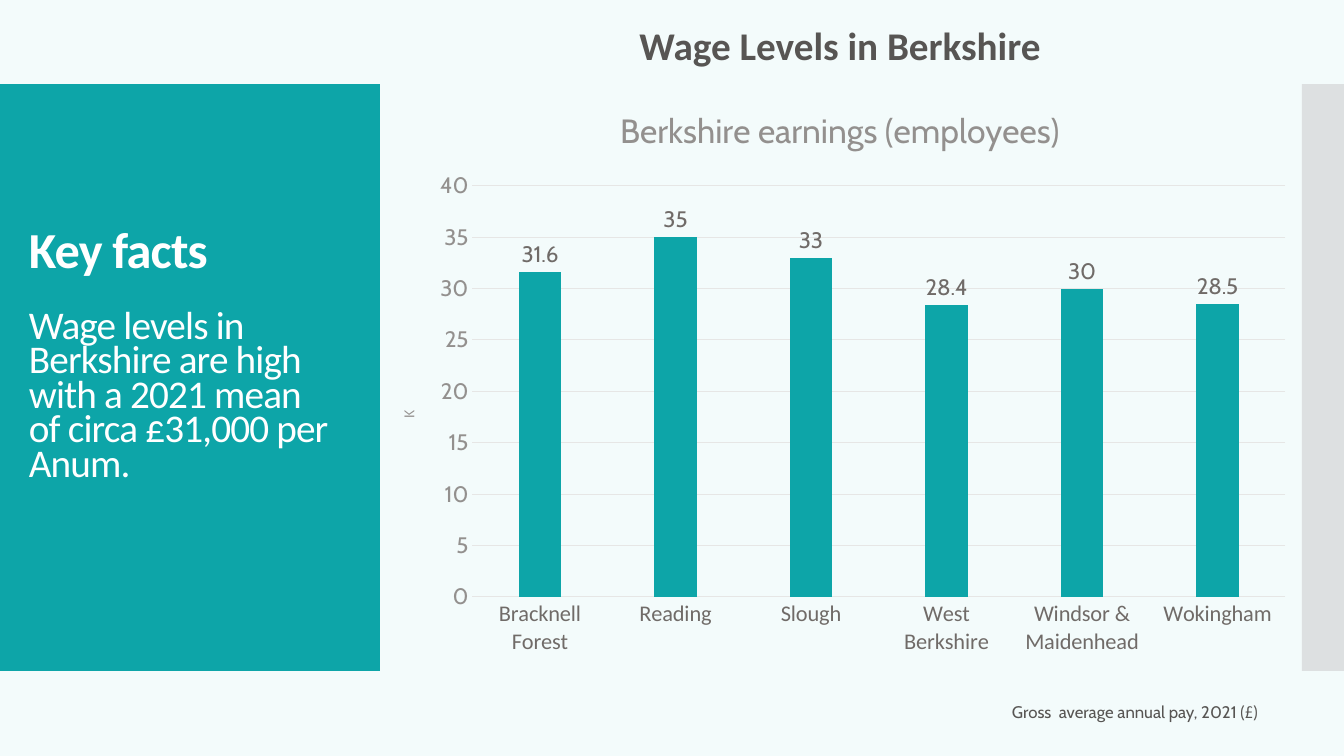
from dataclasses import dataclass

from pptx import Presentation
from pptx.chart.data import CategoryChartData
from pptx.dml.color import RGBColor
from pptx.enum.chart import XL_CHART_TYPE as ChartType, XL_LABEL_POSITION as LabelPos, XL_TICK_MARK as Tick
from pptx.enum.shapes import MSO_SHAPE as Shape
from pptx.enum.text import MSO_ANCHOR as Anchor, PP_ALIGN as Align
from pptx.oxml import parse_xml
from pptx.oxml.ns import nsdecls
from pptx.util import Emu, Pt

TITLE = "Wage Levels in Berkshire"
FACTS_HEADING = "Key facts"
FACTS_BODY = "Wage levels in Berkshire are high with a 2021 mean of circa £31,000 per Anum."
FOOTNOTE = "Gross  average annual pay, 2021 (£)"
CHART_TITLE = "Berkshire earnings (employees)"
VALUE_UNIT = "K"
EARNINGS = {
    "Bracknell Forest": 31.6,
    "Reading": 35,
    "Slough": 33,
    "West Berkshire": 28.4,
    "Windsor & Maidenhead": 30,
    "Wokingham": 28.5,
}

SLIDE_W, SLIDE_H = 1344, 756
BAND_TOP, BAND_H = 84, 587
PANEL_W, STRIP_W = 380, 42
CHART_BOX = (378, 84, SLIDE_W - STRIP_W - 378, 585)
PLOT_BOX = (472, 186, 813, 411)
TITLE_BOX = (378, 16, 924, 57)
FACTS_BOX = (19, 111, 325, 507)
FOOTNOTE_BOX = (950, 697, 318, 30)


@dataclass(frozen=True)
class Theme:
    teal: str = "0DA5A8"
    background: str = "F3FBFB"
    strip: str = "DDE0E1"
    white: str = "FFFFFF"
    dark: str = "575553"
    label: str = "706B68"
    muted: str = "93908E"
    grid: str = "E6E6E5"
    body_font: str = "Calibri"
    chart_font: str = "Cabin"
    heading: int = 36
    title: int = 28
    chart_title: int = 24
    axis: int = 16
    note: int = 12
    unit: int = 10
    leading: float = 24.6


T = Theme()


def px(n):
    return Emu(round(n * 914400 / 100.8))


def rgb(color):
    return RGBColor.from_string(color)


def style(font, name, size, color, bold=False):
    font.name, font.size, font.bold = name, Pt(size), bold
    font.color.rgb = rgb(color)


def place(sp, box):
    sp.left, sp.top, sp.width, sp.height = map(px, box)


def add_block(s, box, color):
    sp = s.shapes.add_shape(Shape.RECTANGLE, *map(px, box))
    sp.shadow.inherit = False
    sp.fill.solid()
    sp.fill.fore_color.rgb = rgb(color)
    sp.line.fill.background()


def add_text(s, box):
    tf = s.shapes.add_textbox(*map(px, box)).text_frame
    tf.word_wrap = True
    return tf


def add_title(s):
    sp = s.shapes.title
    place(sp, TITLE_BOX)
    tf = sp.text_frame
    tf.text = TITLE
    tf.vertical_anchor = Anchor.TOP
    p = tf.paragraphs[0]
    p.alignment = Align.CENTER
    p.line_spacing, p.space_before = 1.0, Pt(0)
    style(p.font, T.body_font, T.title, T.dark, True)


def add_facts(s):
    tf = add_text(s, FACTS_BOX)
    tf.vertical_anchor = Anchor.MIDDLE
    heading, body = tf.paragraphs[0], tf.add_paragraph()
    heading.space_after = Pt(T.leading)
    for p, text, size, bold in (
        (heading, FACTS_HEADING, T.heading, True),
        (body, FACTS_BODY, T.title, False),
    ):
        r = p.add_run()
        r.text = text
        r.font.element.set("spc", "-60") if hasattr(r.font, "element") else r._r.get_or_add_rPr().set("spc", "-60")
        p.line_spacing = Pt(T.leading)
        style(p.font, T.body_font, size, T.white, bold)


def add_footnote(s):
    p = add_text(s, FOOTNOTE_BOX).paragraphs[0]
    p.text = FOOTNOTE
    p.alignment = Align.RIGHT
    style(p.font, T.chart_font, T.note, T.dark)


def fix_plot_area(chart):
    left, top, width, height = CHART_BOX
    x, y, w, h = PLOT_BOX
    fractions = {"x": (x - left) / width, "y": (y - top) / height, "w": w / width, "h": h / height}
    modes = '<c:layoutTarget val="inner"/><c:xMode val="edge"/><c:yMode val="edge"/>'
    sizes = "".join(f'<c:{k} val="{v:.3f}"/>' for k, v in fractions.items())
    plot_area = chart.element.xpath("c:chart/c:plotArea")[0]
    for old in plot_area.xpath("c:layout"):
        plot_area.remove(old)
    plot_area.insert(0, parse_xml(
        f'<c:layout {nsdecls("c")}><c:manualLayout>{modes}{sizes}</c:manualLayout></c:layout>'))


def set_title(owner, tf, text, size, color):
    tf.text = text
    style(tf.paragraphs[0].font, T.chart_font, size, color)


def add_earnings_chart(s):
    data = CategoryChartData()
    data.categories = list(EARNINGS)
    data.add_series(CHART_TITLE, list(EARNINGS.values()))
    chart = s.shapes.add_chart(ChartType.COLUMN_CLUSTERED, *map(px, CHART_BOX), data).chart
    style(chart.font, T.chart_font, T.unit, T.dark)
    chart.has_legend = False
    chart.has_title = True
    set_title(chart, chart.chart_title.text_frame, CHART_TITLE, T.chart_title, T.muted)

    plot = chart.plots[0]
    plot.vary_by_categories = False
    plot.gap_width, plot.overlap = 219, -27
    fill = plot.series[0].format.fill
    fill.solid()
    fill.fore_color.rgb = rgb(T.teal)
    labels = plot.series[0].data_labels
    labels.show_value = True
    labels.position = LabelPos.OUTSIDE_END
    style(labels.font, T.chart_font, T.axis, T.label)

    cat, val = chart.category_axis, chart.value_axis
    for axis, font, color in ((cat, T.body_font, T.label), (val, T.chart_font, T.muted)):
        axis.major_tick_mark = axis.minor_tick_mark = Tick.NONE
        style(axis.tick_labels.font, font, T.axis, color)
    val.minimum_scale, val.maximum_scale, val.major_unit = 0, 40, 5
    val.has_major_gridlines = True
    val.format.line.fill.background()
    for line in (cat.format.line, val.major_gridlines.format.line):
        line.color.rgb = rgb(T.grid)
        line.width = Pt(0.75)
    set_title(val, val.axis_title.text_frame, VALUE_UNIT, T.unit, T.muted)
    fix_plot_area(chart)


def main():
    prs = Presentation()
    prs.slide_width, prs.slide_height = px(SLIDE_W), px(SLIDE_H)
    s = prs.slides.add_slide(prs.slide_layouts.get_by_name("Title Only"))
    s.background.fill.solid()
    s.background.fill.fore_color.rgb = rgb(T.background)
    add_block(s, (0, BAND_TOP, PANEL_W, BAND_H), T.teal)
    add_block(s, (SLIDE_W - STRIP_W, BAND_TOP, STRIP_W, BAND_H), T.strip)
    add_title(s)
    add_facts(s)
    add_footnote(s)
    add_earnings_chart(s)
    prs.save("out.pptx")


if __name__ == "__main__":
    main()
